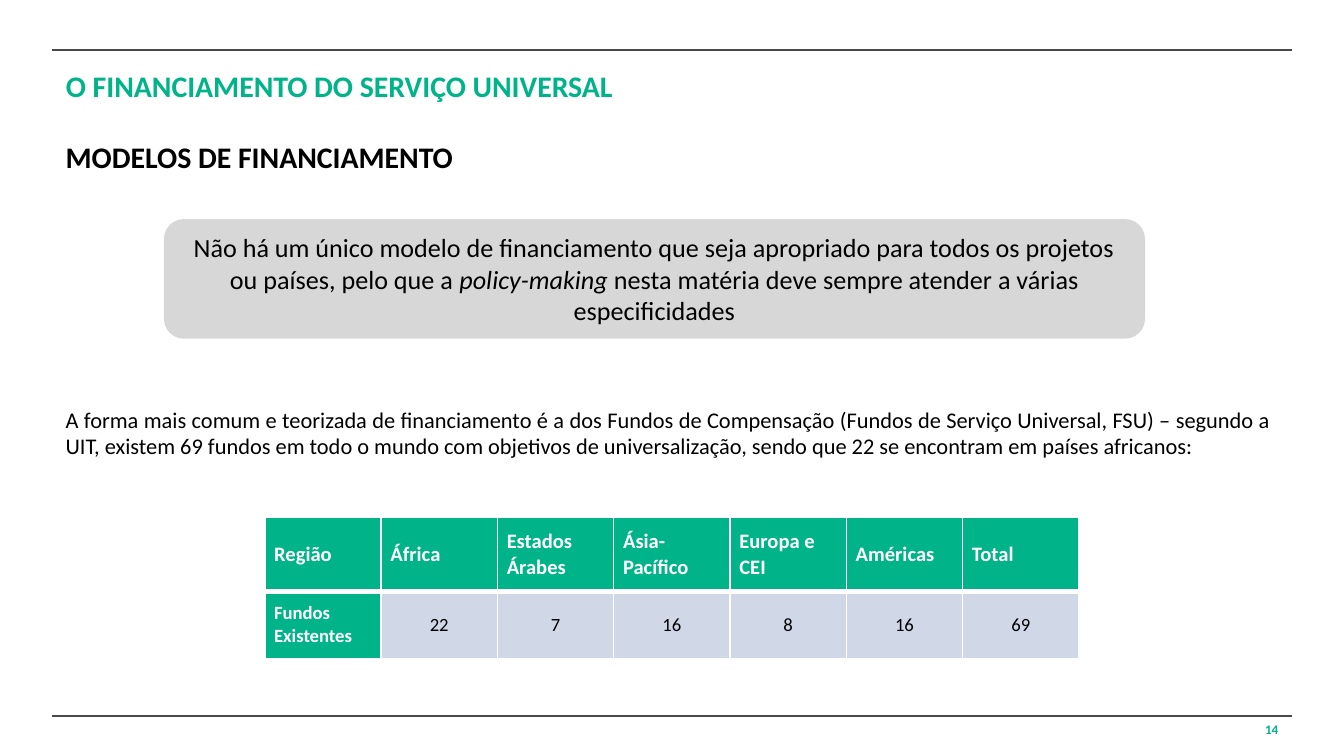
from dataclasses import dataclass

from lxml.etree import SubElement
from pptx import Presentation
from pptx.dml.color import RGBColor
from pptx.enum.shapes import MSO_CONNECTOR, MSO_SHAPE
from pptx.enum.text import MSO_ANCHOR as Anchor, MSO_AUTO_SIZE as AutoSize, PP_ALIGN as Align
from pptx.oxml.ns import qn
from pptx.util import Inches, Pt


@dataclass(frozen=True)
class Theme:
    font: str = "Calibri"
    green: str = "00B388"
    black: str = "000000"
    white: str = "FFFFFF"
    rule: str = "494949"
    callout: str = "BFBFBF"
    cell: str = "D0D8E8"
    heading: int = 16
    statement: int = 14
    body: int = 12
    table_head: int = 11
    table_body: int = 10
    number: int = 7


THEME = Theme()
LEFT, RIGHT = 0.39, 9.61


def rgb(value):
    return RGBColor.from_string(value)


def format_paragraph(paragraph, size, color=THEME.black, bold=False, align=Align.LEFT):
    paragraph.alignment = align
    for run in paragraph.runs:
        run.font.name = THEME.font
        run.font.size = Pt(size)
        run.font.bold = bold
        run.font.color.rgb = rgb(color)


def fill_text(shape, box, text, size, anchor=Anchor.TOP, **style):
    """Place a text shape and write one paragraph in it."""
    shape.left, shape.top, shape.width, shape.height = map(Inches, box)
    frame = shape.text_frame
    frame.text = text
    frame.word_wrap = True
    frame.auto_size = AutoSize.NONE
    frame.vertical_anchor = anchor
    paragraph = frame.paragraphs[0]
    paragraph.space_before = Pt(0)
    format_paragraph(paragraph, size, **style)


def add_text(slide, box, text, size, **style):
    fill_text(slide.shapes.add_textbox(*map(Inches, box)), box, text, size, **style)


def add_frame(slide, top, bottom, number):
    """Rules at top and bottom, page number below the lower one."""
    for y in (top, bottom):
        rule = slide.shapes.add_connector(
            MSO_CONNECTOR.STRAIGHT, Inches(LEFT), Inches(y), Inches(RIGHT), Inches(y))
        rule.line.color.rgb = rgb(THEME.rule)
        rule.line.width = Pt(1)
        SubElement(rule._element.spPr, qn("a:effectLst"))
    width = 2.33
    add_text(slide, (RIGHT - width, bottom, width, 0.2), number, THEME.number,
             anchor=Anchor.MIDDLE, color=THEME.green, bold=True, align=Align.RIGHT)


def add_callout(slide, box, parts):
    """Rounded translucent box; parts are (text, italic) pairs."""
    shape = slide.shapes.add_shape(MSO_SHAPE.ROUNDED_RECTANGLE, *map(Inches, box))
    shape.shadow.inherit = False
    shape.line.fill.background()
    shape.fill.solid()
    shape.fill.fore_color.rgb = rgb(THEME.callout)
    color = shape._element.spPr.find(qn("a:solidFill"))[0]
    SubElement(color, qn("a:alpha"), val="62000")
    frame = shape.text_frame
    frame.word_wrap = True
    frame.vertical_anchor = Anchor.MIDDLE
    paragraph = frame.paragraphs[0]
    for text, italic in parts:
        run = paragraph.add_run()
        run.text = text
        run.font.italic = italic
    format_paragraph(paragraph, THEME.statement, align=Align.CENTER)


def set_borders(cell, **widths):
    """White borders; they must stand before the fill in the cell properties."""
    properties = cell._tc.get_or_add_tcPr()
    for index, side in enumerate(("L", "R", "T", "B")):
        line = SubElement(properties, qn(f"a:ln{side}"), w=str(Pt(widths.get(side, 1))))
        solid = SubElement(line, qn("a:solidFill"))
        SubElement(solid, qn("a:srgbClr"), val=THEME.white)
        properties.insert(index, line)


def add_funds_table(slide, box, rows, row_heights):
    columns = len(rows[0])
    table = slide.shapes.add_table(len(rows), columns, *map(Inches, box)).table
    table.first_col = True
    for column in table.columns:
        column.width = Inches(box[2] / columns)
    for r, values in enumerate(rows):
        table.rows[r].height = Inches(row_heights[r])
        for c, value in enumerate(values):
            cell = table.cell(r, c)
            is_header = r == 0 or c == 0
            cell.text = value
            cell.vertical_anchor = Anchor.MIDDLE
            cell.margin_left = cell.margin_right = Inches(0.07)
            cell.margin_top = cell.margin_bottom = 0
            cell.fill.solid()
            cell.fill.fore_color.rgb = rgb(THEME.green if is_header else THEME.cell)
            set_borders(cell, **({"B": 3} if r == 0 else {"T": 3}))
            paragraph = cell.text_frame.paragraphs[0]
            paragraph.space_before = Pt(0)
            paragraph.space_after = Pt(3)
            format_paragraph(
                paragraph, THEME.table_body if r else THEME.table_head,
                color=THEME.white if is_header else THEME.black, bold=is_header,
                align=Align.LEFT if is_header else Align.CENTER)


def build_slide(presentation):
    slide = presentation.slides.add_slide(presentation.slide_layouts[5])
    width = RIGHT - LEFT
    add_frame(slide, 0.37, 5.33, "14")

    # Title and subtitle
    fill_text(slide.shapes.title, (LEFT, 0.45, width, 0.45),
              "O FINANCIAMENTO DO SERVIÇO UNIVERSAL", THEME.heading,
              color=THEME.green, bold=True, align=Align.JUSTIFY)
    add_text(slide, (LEFT, 0.98, width, 0.5), "MODELOS DE FINANCIAMENTO",
             THEME.heading, bold=True, align=Align.JUSTIFY)

    # Key statement
    add_callout(slide, (1.22, 1.63, 7.3, 0.89), [
        ("Não há um único modelo de financiamento que seja apropriado para todos "
         "os projetos ou países, pelo que a ", False),
        ("policy-making", True),
        (" nesta matéria deve sempre atender a várias especificidades", False),
    ])

    # Explanation and figures by region
    add_text(slide, (LEFT, 2.97, 9.17, 0.5),
             "A forma mais comum e teorizada de financiamento é a dos Fundos de "
             "Compensação (Fundos de Serviço Universal, FSU) – segundo a UIT, existem "
             "69 fundos em todo o mundo com objetivos de universalização, sendo que 22 "
             "se encontram em países africanos:", THEME.body, align=Align.JUSTIFY)
    add_funds_table(slide, (1.97, 3.85, 6.06, 1.05), [
        ["Região", "África", "Estados Árabes", "Ásia-Pacífico", "Europa e CEI",
         "Américas", "Total"],
        ["Fundos Existentes", "22", "7", "16", "8", "16", "69"],
    ], (0.55, 0.5))


def main():
    presentation = Presentation()
    # Widescreen, 16:9
    presentation.slide_width = Inches(10)
    presentation.slide_height = presentation.slide_width * 9 // 16
    build_slide(presentation)
    presentation.save("out.pptx")


if __name__ == "__main__":
    main()
